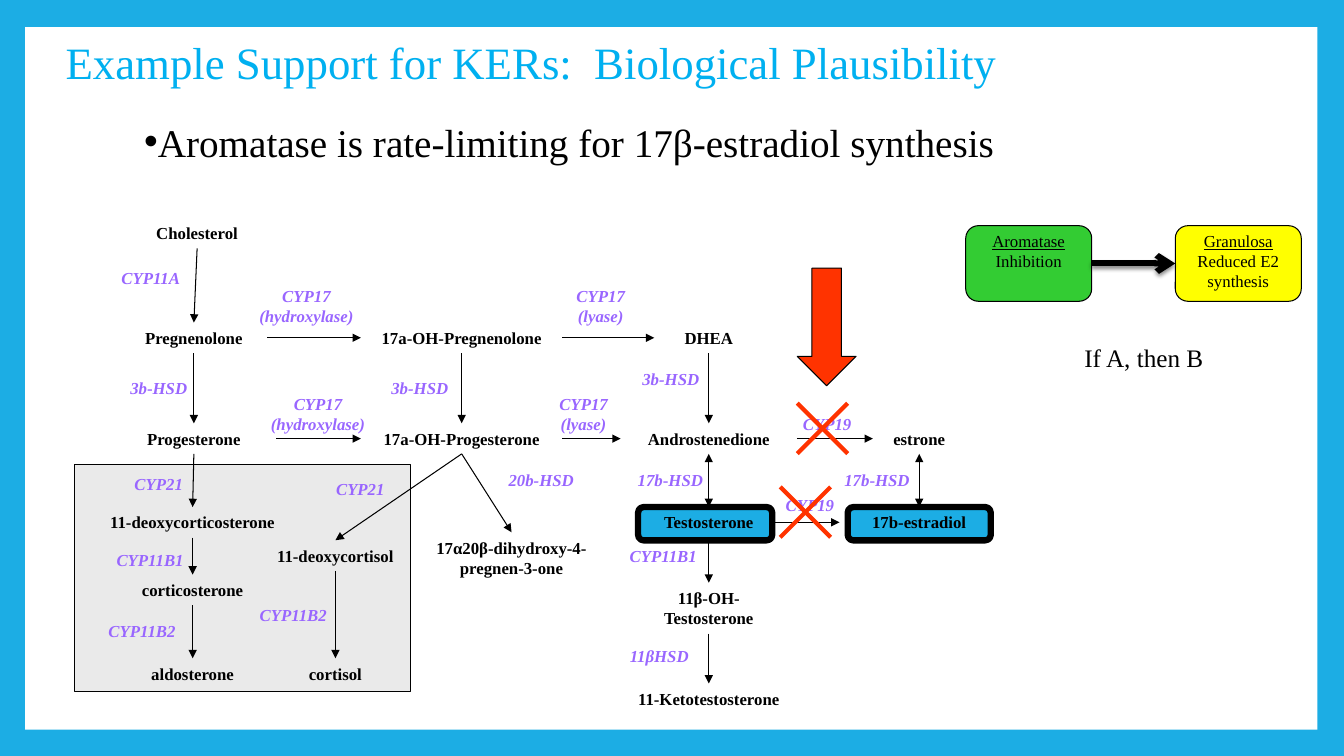
from dataclasses import dataclass

from pptx import Presentation
from pptx.dml.color import RGBColor
from pptx.enum.shapes import MSO_CONNECTOR, MSO_SHAPE
from pptx.enum.text import MSO_ANCHOR, MSO_AUTO_SIZE, PP_ALIGN
from pptx.oxml import parse_xml
from pptx.oxml.ns import nsdecls, qn
from pptx.util import Pt


@dataclass(frozen=True)
class Theme:
    font: str = "Times New Roman"
    blue: str = "1CADE4"
    title: str = "00B0F0"
    ink: str = "000000"
    paper: str = "FFFFFF"
    enzyme: str = "9966FF"
    zone: str = "EAEAEA"
    red: str = "FF3300"
    green: str = "33CC33"
    yellow: str = "FFFF00"
    title_size: int = 32
    body_size: int = 28
    note_size: int = 18
    label_size: int = 12
    thin: float = 0.75


THEME = Theme()
TOP, LEFT, BOTTOM, RIGHT = range(4)

# Column centres and row tops of the pathway
PREG, CORT, DOC, OH17, ANDRO, ESTRO = 138.5, 137.6, 239.6, 329.8, 506.3, 656.6
ROW_1, ROW_2, ROW_3, ROW_LAST = 230.4, 302.4, 362.2, 470.2

# Name, centre, top, width, lines
COMPOUNDS = [
    ("Cholesterol", 140.8, 155.6, 90, 1),
    ("Pregnenolone", PREG, ROW_1, 105, 1),
    ("Progesterone", PREG, ROW_2, 117.4, 1),
    ("17a-OH-Pregnenolone", OH17, ROW_1, 144, 1),
    ("17a-OH-Progesterone", OH17, ROW_2, 144, 1),
    ("DHEA", ANDRO, ROW_1, 77.8, 1),
    ("Androstenedione", ANDRO, ROW_2, 126, 1),
    ("Testosterone", ANDRO, ROW_3, 90, 1),
    ("estrone", ESTRO, ROW_2, 66.2, 1),
    ("17b-estradiol", ESTRO, ROW_3, 113.8, 1),
    ("17α20β-dihydroxy-4-pregnen-3-one", 365.4, 380.2, 131.8, 2),
    ("11β-OH-Testosterone", ANDRO, 416.2, 90, 2),
    ("11-Ketotestosterone", ANDRO, 488.2, 138.2, 1),
    ("11-deoxycorticosterone", CORT, ROW_3, 156.2, 1),
    ("corticosterone", CORT, 410.4, 108, 1),
    ("aldosterone", CORT, ROW_LAST, 108, 1),
    ("11-deoxycortisol", DOC, 385.9, 120.2, 1),
    ("cortisol", DOC, ROW_LAST, 72, 1),
]

# Name (upright part between bars), left, top, width, lines
ENZYMES = [
    ("CYP11A", 59.8, 187.9, 95.8, 1),
    ("CYP17 (hydroxylase)", 167.8, 200.2, 102.2, 2),
    ("CYP17 (lyase)", 389.5, 200.2, 79.2, 2),
    ("3b|-|HSD", 83.5, 266.4, 59.8, 1),
    ("3b-HSD", 257.8, 266.4, 84.2, 1),
    ("3b-HSD", 449.3, 259.9, 59.8, 1),
    ("CYP17 (hydroxylase)", 179.3, 277.9, 95.8, 2),
    ("CYP17 (lyase)", 377.3, 277.9, 79.2, 2),
    ("CYP19", 563.8, 292.3, 54, 1),
    ("20b-HSD", 353.5, 331.9, 66.2, 1),
    ("17b|-|HSD", 425.5, 331.9, 106.6, 1),
    ("17b|-|HSD", 587.5, 331.9, 77.8, 1),
    ("CYP19", 551.5, 349.9, 54, 1),
    ("CYP21", 83.5, 334.8, 59.8, 1),
    ("CYP21", 227.5, 338.4, 59.8, 1),
    ("CYP11B1", 71.3, 388.8, 72, 1),
    ("CYP11B1", 437.8, 385.9, 72, 1),
    ("CYP11B2", 65.5, 439.9, 72, 1),
    ("CYP11B2", 173.5, 428.4, 72, 1),
    ("11βHSD", 437.8, 457.9, 66.2, 1),
]

ACROSS = [
    ("Pregnenolone", "17a-OH-Pregnenolone"),
    ("17a-OH-Pregnenolone", "DHEA"),
    ("Progesterone", "17a-OH-Progesterone"),
    ("17a-OH-Progesterone", "Androstenedione"),
    ("Androstenedione", "estrone"),
    ("Testosterone", "17b-estradiol"),
]
DOWN = [
    ("Cholesterol", "Pregnenolone"),
    ("Pregnenolone", "Progesterone"),
    ("Progesterone", "11-deoxycorticosterone"),
    ("11-deoxycorticosterone", "corticosterone"),
    ("corticosterone", "aldosterone"),
    ("17a-OH-Pregnenolone", "17a-OH-Progesterone"),
    ("17a-OH-Progesterone", "17α20β-dihydroxy-4-pregnen-3-one"),
    ("17a-OH-Progesterone", "11-deoxycortisol"),
    ("11-deoxycortisol", "cortisol"),
    ("DHEA", "Androstenedione"),
    ("Testosterone", "11β-OH-Testosterone"),
    ("11β-OH-Testosterone", "11-Ketotestosterone"),
]
BOTH_WAYS = [("Androstenedione", "Testosterone"), ("estrone", "17b-estradiol")]


def set_all(target, values):
    for key, value in values.items():
        setattr(target, key, value)


def write(paragraph, text, size, color=THEME.ink, align=PP_ALIGN.LEFT, **style):
    """Fill a paragraph; every second part between bars is upright."""
    set_all(paragraph, {"alignment": align, "space_before": Pt(0)})
    for index, part in enumerate(text.split("|")):
        run = paragraph.add_run()
        run.text = part
        set_all(run.font, {"name": THEME.font, "size": Pt(size), **style})
        run.font.color.rgb = RGBColor.from_string(color)
        if index % 2:
            run.font.italic = False


def add_label(slide, text, box, size=THEME.label_size, **style):
    label = slide.shapes.add_textbox(*map(Pt, box))
    set_all(label.text_frame, {"word_wrap": True, "auto_size": MSO_AUTO_SIZE.SHAPE_TO_FIT_TEXT})
    write(label.text_frame.paragraphs[0], text, size, **style)
    return label


def add_block(slide, preset, box, fill, line_width=THEME.thin):
    block = slide.shapes.add_shape(preset, *map(Pt, box))
    block.shadow.inherit = False
    block.fill.solid()
    block.fill.fore_color.rgb = RGBColor.from_string(fill)
    if line_width:
        block.line.color.rgb = RGBColor.from_string(THEME.ink)
        block.line.width = Pt(line_width)
    else:
        block.line.fill.background()
    return block


def add_line(slide, ends=(0, 0, 0, 0), joins=None, color=THEME.ink, width=THEME.thin,
             head=None, tail=None, effect=""):
    line = slide.shapes.add_connector(MSO_CONNECTOR.STRAIGHT, *map(Pt, ends))
    if joins:
        start, start_side, end, end_side = joins
        line.begin_connect(start, start_side)
        line.end_connect(end, end_side)
    line.line.color.rgb = RGBColor.from_string(color)
    line.line.width = Pt(width)
    properties = line._element.spPr
    for tag, kind in (("headEnd", head), ("tailEnd", tail)):
        if kind:
            properties.find(qn("a:ln")).append(parse_xml(f'<a:{tag} {nsdecls("a")} type="{kind}"/>'))
    properties.append(parse_xml(f'<a:effectLst {nsdecls("a")}>{effect}</a:effectLst>'))


def add_cross(slide, left, top, side=36):
    right, bottom = left + side, top + side
    for ends in ((left, top, right, bottom), (right, top, left, bottom)):
        add_line(slide, ends, color=THEME.red, width=3)


def add_key_event(slide, left, fill, heading, detail):
    event = add_block(slide, MSO_SHAPE.ROUNDED_RECTANGLE, (left, 161.2, 90, 54), fill)
    frame = event.text_frame
    set_all(frame, {"word_wrap": True, "vertical_anchor": MSO_ANCHOR.TOP,
                    "margin_left": Pt(1.44), "margin_right": Pt(1.44),
                    "margin_top": Pt(0.72), "margin_bottom": Pt(0.72)})
    write(frame.paragraphs[0], heading, THEME.label_size, align=PP_ALIGN.CENTER, underline=True)
    write(frame.add_paragraph(), detail, THEME.label_size, align=PP_ALIGN.CENTER)
    return event


def fill_placeholder(placeholder, text, box, size, color, bullet=None):
    set_all(placeholder, dict(zip(("left", "top", "width", "height"), map(Pt, box))))
    set_all(placeholder.text_frame, {"word_wrap": True, "auto_size": MSO_AUTO_SIZE.NONE,
                                     "vertical_anchor": MSO_ANCHOR.TOP})
    paragraph = placeholder.text_frame.paragraphs[0]
    if bullet:
        properties = paragraph._p.get_or_add_pPr()
        properties.set("marL", "0")
        properties.set("indent", "0")
        properties.append(parse_xml(f'<a:buChar {nsdecls("a")} char="{bullet}"/>'))
    write(paragraph, text, size, color)


def add_pathway(slide):
    # Corticoid branch and highlighted hormones
    add_block(slide, MSO_SHAPE.RECTANGLE, (53.3, 331.9, 239.8, 162), THEME.zone)
    for left, width in ((455.8, 95.8), (605.5, 102.2)):
        add_block(slide, MSO_SHAPE.ROUNDED_RECTANGLE, (left, ROW_3, width, 23.8), THEME.blue, 4.5)

    # Compounds and enzymes
    centred = {"align": PP_ALIGN.CENTER, "bold": True}
    compounds = {}
    for name, centre, top, width, lines in COMPOUNDS:
        box = (centre - width / 2, top, width, 7.2 + 14.6 * lines)
        compounds[name] = add_label(slide, name, box, **centred)
    for name, left, top, width, lines in ENZYMES:
        box = (left, top, width, 7.2 + 14.6 * lines)
        add_label(slide, name, box, color=THEME.enzyme, italic=True, **centred)

    # Reactions
    for pairs, start_side, end_side, head in ((ACROSS, RIGHT, LEFT, None), (DOWN, BOTTOM, TOP, None),
                                              (BOTH_WAYS, BOTTOM, TOP, "triangle")):
        for start, end in pairs:
            joins = (compounds[start], start_side, compounds[end], end_side)
            add_line(slide, joins=joins, head=head, tail="triangle")

    # Blocked aromatase steps
    add_cross(slide, 569.5, 288)
    add_cross(slide, 557.3, 347.8)
    add_block(slide, MSO_SHAPE.DOWN_ARROW, (569.5, 191.5, 42, 84), THEME.red)


def add_key_events(slide):
    inhibition = add_key_event(slide, 689.8, THEME.green, "Aromatase", "Inhibition")
    reduction = add_key_event(slide, 839.5, THEME.yellow, "Granulosa", "Reduced E2 synthesis")
    shadow = (f'<a:outerShdw blurRad="{Pt(3)}" dist="{Pt(2)}" dir="5400000"><a:srgbClr val="{THEME.ink}">'
              '<a:alpha val="45000"/></a:srgbClr></a:outerShdw>')
    add_line(slide, joins=(inhibition, RIGHT, reduction, LEFT), width=4.25, tail="arrow", effect=shadow)
    add_label(slide, "If A, then B", (767.5, 241.2, 100.8, 28.8), THEME.note_size)


def main():
    deck = Presentation()
    set_all(deck, {"slide_width": Pt(960), "slide_height": Pt(540)})
    slide = deck.slides.add_slide(deck.slide_layouts[1])

    # Blue frame around a white panel
    slide.background.fill.solid()
    slide.background.fill.fore_color.rgb = RGBColor.from_string(THEME.blue)
    panel = add_block(slide, MSO_SHAPE.RECTANGLE, (18, 19.4, 923, 501.8), THEME.paper, 0)
    slide.shapes._spTree.insert(2, panel._element)

    # Title and statement
    title, statement = slide.placeholders
    fill_placeholder(title, "Example Support for KERs:  Biological Plausibility",
                     (39.6, 20.9, 780.5, 46.1), THEME.title_size, THEME.title)
    fill_placeholder(statement, "Aromatase is rate-limiting for 17β-estradiol synthesis",
                     (95.8, 80.6, 630, 41), THEME.body_size, THEME.ink, "•")

    add_pathway(slide)
    add_key_events(slide)
    deck.save("out.pptx")


if __name__ == "__main__":
    main()
